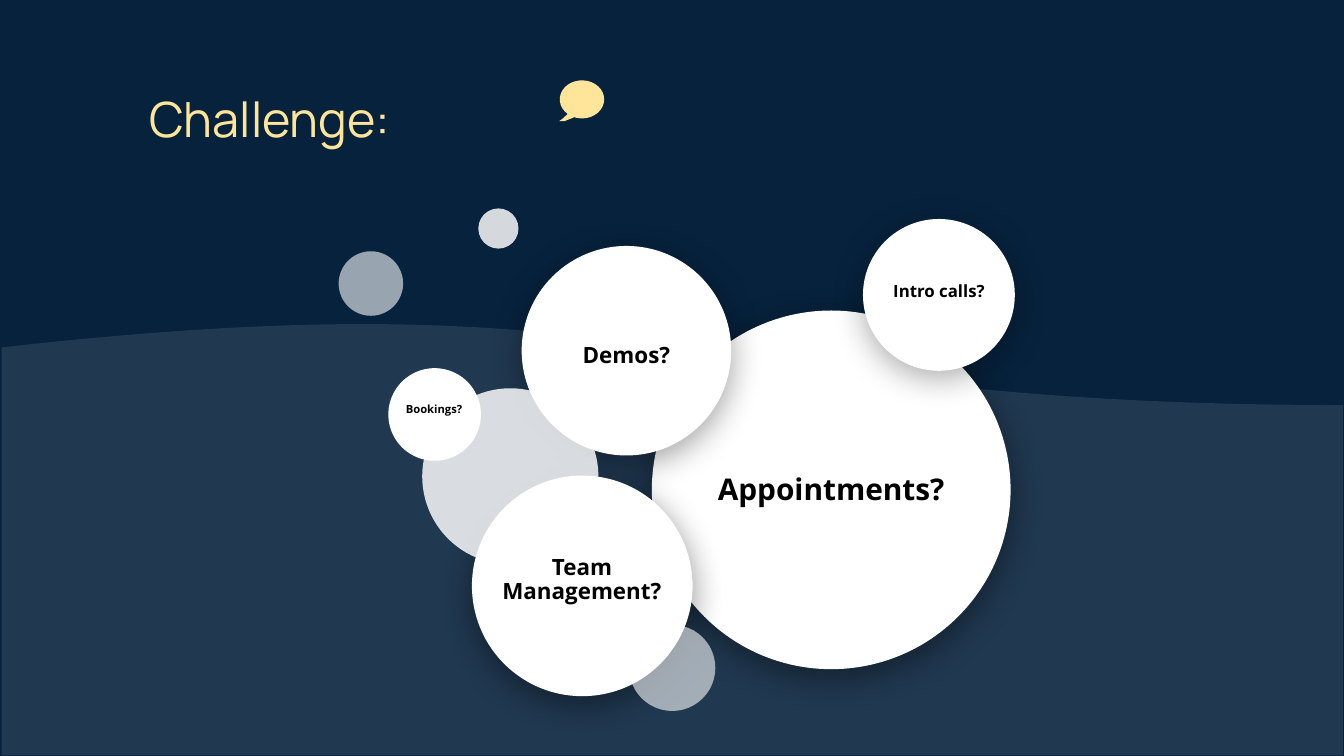
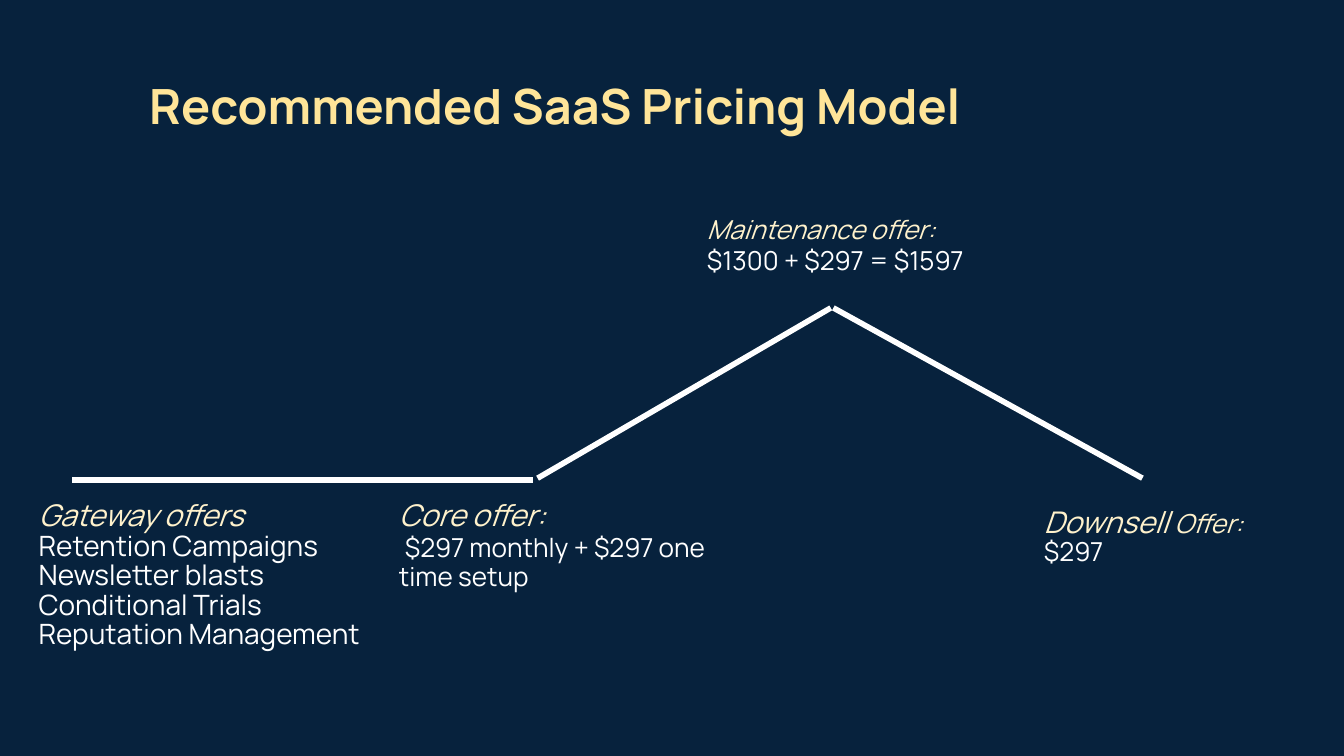
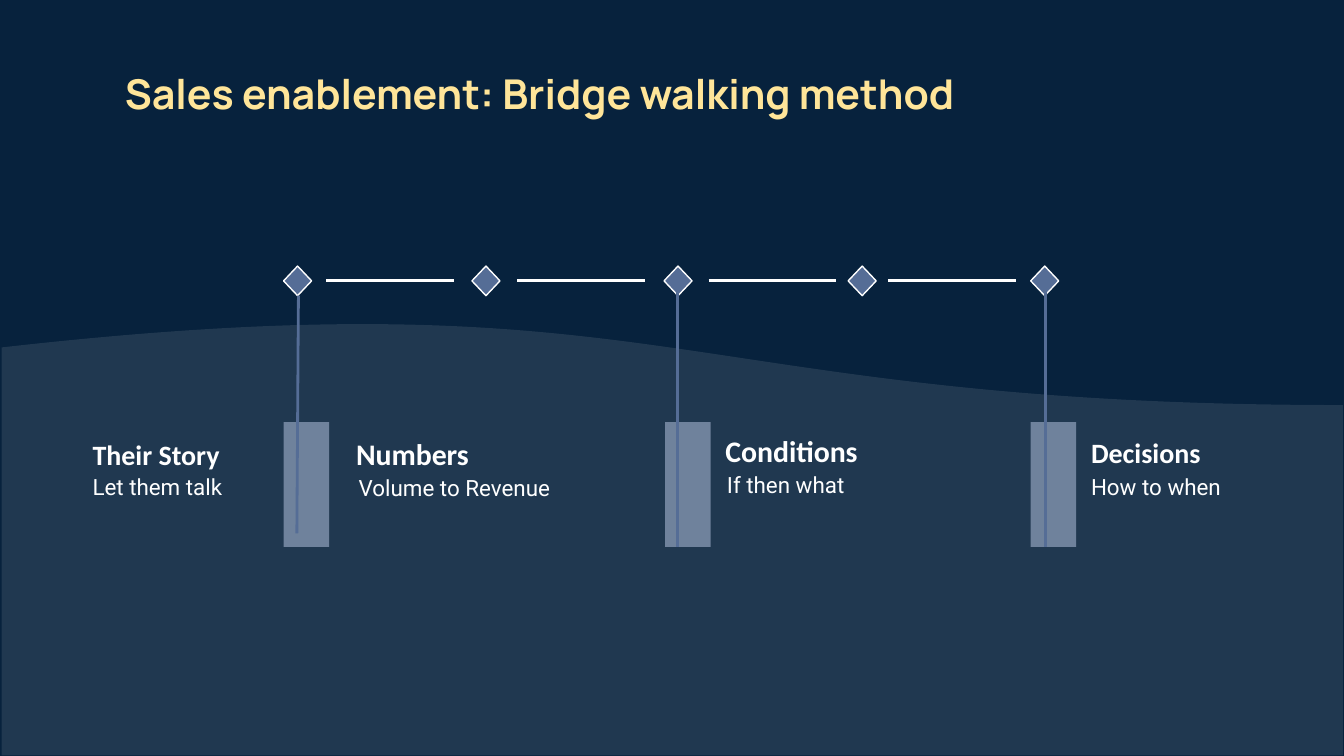
"""Builds three slides on sales challenges, pricing and the bridge walking method."""
import math
from dataclasses import dataclass

import pptx
import pptx.dml.color
import pptx.enum.shapes
import pptx.enum.text
import pptx.oxml
import pptx.oxml.ns
import pptx.util

Cm = pptx.util.Cm
Pt = pptx.util.Pt
SHAPES = pptx.enum.shapes.MSO_SHAPE
ALIGN = pptx.enum.text.PP_ALIGN


@dataclass(frozen=True)
class Theme:
    night: str = "07223D"
    white: str = "FFFFFF"
    black: str = "000000"
    gold: str = "FFE599"
    cream: str = "FFF2CC"
    pillar: str = "A9B9D3"
    steel: str = "556D96"
    display: str = "Manrope"
    bubble: str = "Open Sans"
    heading: str = "Calibri"
    detail: str = "Roboto"
    title_size: int = 26
    long_title_size: int = 22
    offer_size: int = 16
    price_size: int = 14
    list_size: int = 15
    detail_size: int = 12
    title_spacing: float = 0.95
    tight_spacing: float = 0.88
    inset: float = 0.25


@dataclass(frozen=True)
class Words:
    text: str
    size: float
    font: str
    color: str
    bold: bool = False
    italic: bool = False


class Deck:
    TITLE_AND_LIST = 1
    TITLE_ONLY = 5

    def __init__(self, theme):
        self.theme = theme
        self.prs = pptx.Presentation()
        self.prs.slide_width, self.prs.slide_height = Cm(25.4), Cm(14.29)
        backdrop = self.prs.slide_master.background.fill
        backdrop.solid()
        backdrop.fore_color.rgb = self.rgb(theme.night)
        self.slide = None

    @staticmethod
    def rgb(color):
        return pptx.dml.color.RGBColor.from_string(color)

    @staticmethod
    def add_xml(parent, tag, **attributes):
        child = pptx.oxml.parse_xml(f"<a:{tag} {pptx.oxml.ns.nsdecls('a')}/>")
        for name, value in attributes.items():
            child.set(name, str(value))
        parent.append(child)
        return child

    def start(self, layout, title, box, size, bold=True):
        t = self.theme
        self.slide = self.prs.slides.add_slide(self.prs.slide_layouts[layout])
        heading = Words(title, size, t.display, t.gold, bold)
        self.fill_placeholder(self.slide.shapes.title, box, [[heading]], t.title_spacing)

    def fill_placeholder(self, holder, box, lines, spacing):
        holder.left, holder.top, holder.width, holder.height = map(Cm, box)
        self.set_lines(holder.text_frame, lines, spacing)
        for paragraph in holder.text_frame.paragraphs:
            properties = paragraph._p.get_or_add_pPr()
            properties.set("marL", "0")
            properties.set("indent", "0")
            self.add_xml(properties, "buNone")

    def set_lines(self, frame, lines, spacing=1.0, align=ALIGN.LEFT, top=None):
        frame.word_wrap = True
        frame.auto_size = pptx.enum.text.MSO_AUTO_SIZE.NONE
        frame.vertical_anchor = pptx.enum.text.MSO_ANCHOR.TOP
        frame.margin_left = frame.margin_right = frame.margin_bottom = Cm(self.theme.inset)
        frame.margin_top = Cm(self.theme.inset if top is None else top)
        for index, line in enumerate(lines):
            paragraph = frame.add_paragraph() if index else frame.paragraphs[0]
            paragraph.alignment = align
            paragraph.line_spacing = spacing
            paragraph.space_before = Pt(0)
            for words in line:
                run = paragraph.add_run()
                run.text = words.text
                run.font.name = words.font
                run.font.size = Pt(words.size)
                run.font.bold = words.bold
                run.font.italic = words.italic
                run.font.color.rgb = self.rgb(words.color)

    def text(self, box, lines, **style):
        self.set_lines(self.slide.shapes.add_textbox(*map(Cm, box)).text_frame, lines, **style)

    def paint(self, shape, color, opacity=100, outline=None):
        shape.shadow.inherit = False
        shape.fill.solid()
        shape.fill.fore_color.rgb = self.rgb(color)
        if opacity < 100:
            tint = shape.element.spPr.find(".//" + pptx.oxml.ns.qn("a:srgbClr"))
            self.add_xml(tint, "alpha", val=opacity * 1000)
        if outline:
            shape.line.color.rgb = self.rgb(outline)
            shape.line.width = Pt(0.75)
        else:
            shape.line.fill.background()

    def shape(self, kind, box, color, opacity=100, outline=None):
        shape = self.slide.shapes.add_shape(kind, *map(Cm, box))
        self.paint(shape, color, opacity, outline)
        return shape

    def circle(self, left, top, size, opacity=100, shadow=None):
        disc = self.shape(SHAPES.OVAL, (left, top, size, size), self.theme.white, opacity)
        if shadow:
            effects = disc.element.spPr.find(pptx.oxml.ns.qn("a:effectLst"))
            cast = self.add_xml(effects, "outerShdw", blurRad=Pt(18), dist=Pt(4),
                                dir=90 * 60000, algn="bl", rotWithShape=0)
            shade = self.add_xml(cast, "srgbClr", val=self.theme.black)
            self.add_xml(shade, "alpha", val=shadow * 1000)

    def wave(self):
        wave = self.shape(SHAPES.FLOWCHART_DOCUMENT, (0.03, 6.02, 25.35, 8.26),
                          self.theme.white, 10)
        wave.rotation = 180
        wave.element.spPr.xfrm.set("flipH", "1")

    def line(self, start, end, color, width):
        line = self.slide.shapes.add_connector(
            pptx.enum.shapes.MSO_CONNECTOR.STRAIGHT, *map(Cm, (*start, *end)))
        line.line.color.rgb = self.rgb(color)
        line.line.width = Pt(width)
        self.add_xml(line.element.spPr, "effectLst")

    def speech_bubble(self, center, radii, tail):
        (x, y), (rx, ry) = center, radii
        angles = [math.radians(degrees) for degrees in range(130, 472, 11)]
        outline = [(x + rx * math.cos(a), y + ry * math.sin(a)) for a in angles] + tail
        points = [(Cm(px), Cm(py)) for px, py in outline]
        builder = self.slide.shapes.build_freeform(*points[0], scale=1.0)
        builder.add_line_segments(points[1:], close=True)
        self.paint(builder.convert_to_shape(), self.theme.gold)


def challenge_slide(deck):
    t = deck.theme
    deck.start(deck.TITLE_ONLY, "Challenge:", (2.57, 1.52, 19.08, 1.19), t.title_size, bold=False)
    deck.wave()
    for left, top, size, shadow in [(12.32, 5.87, 6.78, 42), (9.86, 4.65, 3.96, 37),
                                    (8.92, 8.99, 4.17, 41), (16.31, 4.14, 2.87, 33)]:
        deck.circle(left, top, size, shadow=shadow)
    for left, top, size, opacity in [(11.89, 11.81, 1.63, 59), (6.4, 4.75, 1.22, 59),
                                     (7.98, 7.34, 3.33, 83), (7.34, 6.96, 1.75, 100),
                                     (9.04, 3.94, 0.76, 83)]:
        deck.circle(left, top, size, opacity)
    for question, size, box, top, align in [
        ("Appointments?", 16, (12.32, 7.98, 6.78, 2.39), 1.0, ALIGN.CENTER),
        ("Demos?", 12, (9.86, 5.69, 3.96, 2.39), 0.82, ALIGN.CENTER),
        ("Team Management?", 12, (9.02, 9.7, 3.96, 2.39), 0.82, ALIGN.CENTER),
        ("Intro calls?", 9, (16.31, 5.05, 2.87, 1.63), 0.3, ALIGN.CENTER),
        ("Bookings?", 6, (7.42, 6.71, 1.93, 1.91), 0.93, ALIGN.LEFT),
    ]:
        deck.text(box, [[Words(question, size, t.bubble, t.black, bold=True)]],
                  spacing=t.tight_spacing, align=align, top=top)
    deck.speech_bubble((11.0, 1.88), (0.42, 0.36),
                       [(10.8, 2.24), (10.67, 2.29), (10.57, 2.29), (10.64, 2.24)])


def pricing_slide(deck):
    t = deck.theme

    def label(text, size=t.offer_size):
        return Words(text, size, t.display, t.cream, italic=True)

    def price(text, size=t.price_size):
        return Words(text, size, t.display, t.white)

    deck.start(deck.TITLE_AND_LIST, "Recommended SaaS Pricing Model",
               (2.57, 1.27, 19.94, 2.39), t.title_size)
    campaigns = ["Retention Campaigns", "Newsletter blasts",
                 "Conditional Trials", "Reputation Management"]
    gateway = [[label("Gateway offers")]] + [[price(c, t.list_size)] for c in campaigns]
    deck.fill_placeholder(deck.slide.placeholders[1], (0.48, 9.22, 8.33, 3.76),
                          gateway, t.tight_spacing)
    for start, end in [((1.37, 9.07), (10.08, 9.07)), ((10.16, 9.04), (15.7, 5.82)),
                       ((15.75, 5.82), (21.59, 9.04))]:
        deck.line(start, end, t.white, 3)
    for box, lines in [
        ((7.29, 9.22, 6.3, 0.51),
         [[label("Core offer:")],
          [label(" "), price("$297 monthly + $297 one time setup")]]),
        ((13.11, 3.86, 6.81, 1.4),
         [[label("Maintenance offer:", t.price_size)],
          [price("$1300 + $297 = $1597"), price(" ", t.offer_size)]]),
        ((19.48, 9.35, 4.55, 0.51),
         [[label("Downsell "), label("Offer: ", t.price_size), price("$297")]]),
    ]:
        deck.text(box, lines, spacing=t.tight_spacing)


def bridge_slide(deck):
    t = deck.theme
    deck.start(deck.TITLE_ONLY, "Sales enablement: Bridge walking method",
               (2.11, 1.12, 19.71, 2.39), t.long_title_size)
    deck.wave()
    for left in (12.57, 19.48, 5.36):
        deck.shape(SHAPES.RECTANGLE, (left, 7.98, 0.86, 2.36), t.pillar, 58)
    for left in (5.36, 8.92, 12.55, 16.03, 19.48):
        deck.shape(SHAPES.DIAMOND, (left, 5.03, 0.53, 0.56), t.steel, outline=t.white)
    for left in (6.17, 9.78, 13.39, 16.79):
        deck.line((left, 5.31), (left + 2.41, 5.31), t.white, 1.5)
    for foot, top in [((5.61, 10.08), (5.64, 5.59)), ((12.8, 10.34), (12.8, 5.33)),
                      ((19.76, 10.34), (19.76, 5.33))]:
        deck.line(foot, top, t.steel, 1.5)
    for step, size, step_box, hint, hint_box in [
        ("Their Story", 15, (1.5, 8.03, 6.3), "Let them talk", (1.5, 8.69, 5.99)),
        ("Numbers", 16, (6.48, 7.98, 4.95), "Volume to Revenue", (6.53, 8.71, 5.21)),
        ("Conditions", 16, (13.46, 7.92, 5.99), "If then what", (13.49, 8.66, 4.52)),
        ("Decisions", 15, (20.37, 7.98, 5), "How to when", (20.37, 8.69, 5)),
    ]:
        deck.text((*hint_box, 1.57), [[Words(hint, t.detail_size, t.detail, t.white)]])
        deck.text((*step_box, 1.04), [[Words(step, size, t.heading, t.white, bold=True)]])


def main():
    deck = Deck(Theme())
    challenge_slide(deck)
    pricing_slide(deck)
    bridge_slide(deck)
    deck.prs.save("out.pptx")


if __name__ == "__main__":
    main()
